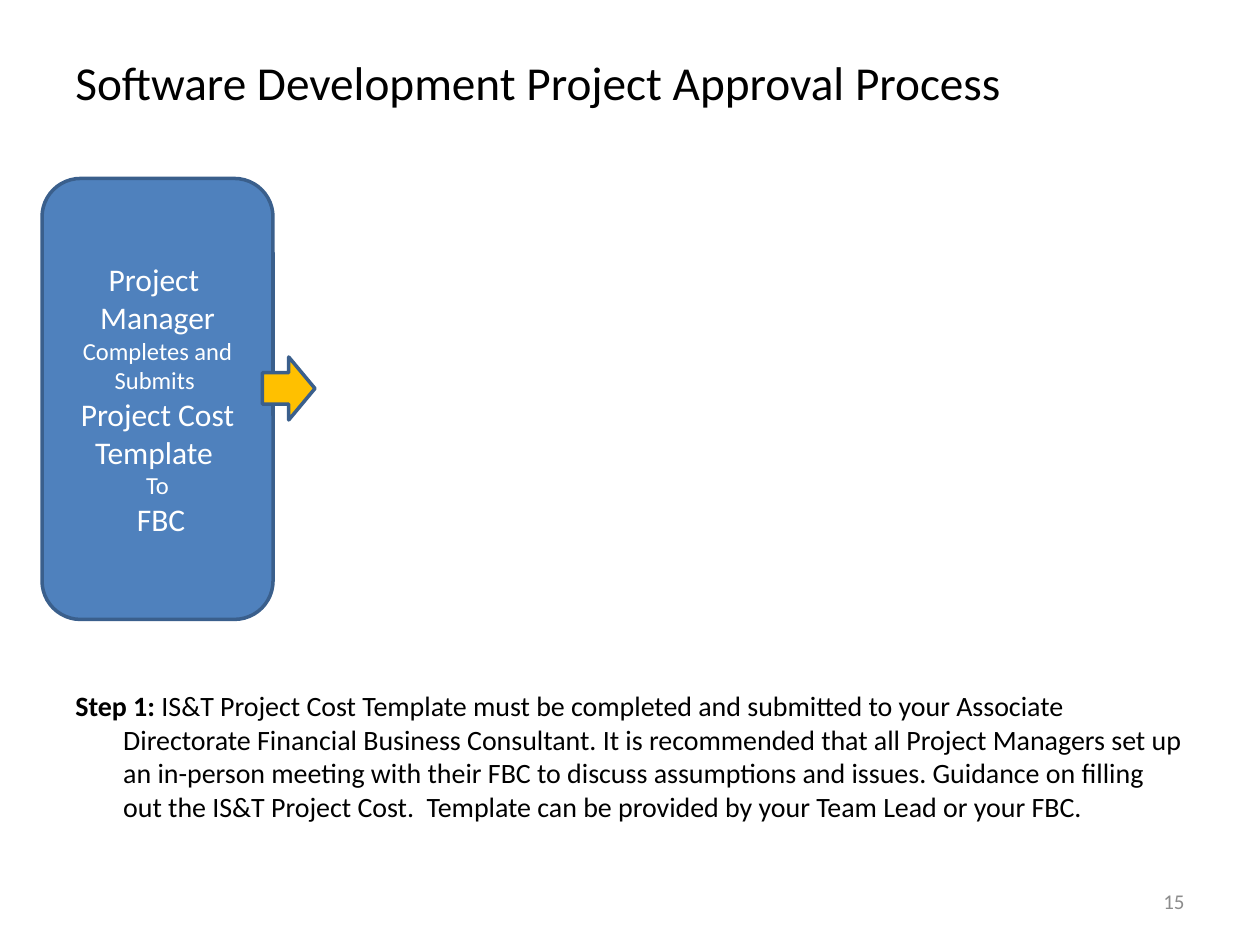
from pptx import Presentation
from pptx.dml.color import RGBColor
from pptx.enum.shapes import MSO_SHAPE
from pptx.enum.text import MSO_ANCHOR, PP_ALIGN
from pptx.util import Inches, Pt

ROUND, ARROW = MSO_SHAPE.ROUNDED_RECTANGLE, MSO_SHAPE.RIGHT_ARROW
TOP, MID = MSO_ANCHOR.TOP, MSO_ANCHOR.MIDDLE
LEFT, MIDDLE, RIGHT = PP_ALIGN.LEFT, PP_ALIGN.CENTER, PP_ALIGN.RIGHT

THEME = {
    "font": "Calibri",
    "ink": "000000", "light": "FFFFFF", "muted": "8C8C8C",
    "box": "4F81BD", "arrow": "FFC000", "edge": "3A5F8C",
    "title": 27, "lead": 18, "body": 16, "minor": 14, "note": 12,
    "line": 2,
}
COL = ROW = Inches(1) / 12  # 120 columns by 90 rows

deck = Presentation()
deck.slide_width, deck.slide_height = round(120 * COL), round(90 * ROW)
slide = deck.slides.add_slide(deck.slide_layouts[6])


def place(left, top, wide, high):
    return [round(n * unit) for n, unit in
            zip((left, top, wide, high), (COL, ROW, COL, ROW))]


def write(shape, paras, tone, align, anchor):
    """Fill a shape with paragraphs, each a list of (text, size name, bold)."""
    frame = shape.text_frame
    frame.word_wrap, frame.vertical_anchor = True, anchor
    for i, runs in enumerate(paras):
        para = frame.paragraphs[0] if i == 0 else frame.add_paragraph()
        para.alignment = align
        for text, size, bold in runs:
            run = para.add_run()
            run.text = text
            look = {"name": THEME["font"], "size": Pt(THEME[size]), "bold": bold}
            for key, value in look.items():
                setattr(run.font, key, value)
            run.font.color.rgb = RGBColor.from_string(THEME[tone])
    return frame


title = [[("Software Development Project Approval Process", "title", False)]]
step = [[
    ("Step 1: ", "body", True),
    ("IS&T Project Cost Template must be completed and submitted to your "
     "Associate Directorate Financial Business Consultant. It is recommended "
     "that all Project Managers set up an in-person meeting with\u00a0their FBC to "
     "discuss assumptions and issues. Guidance on filling out the IS&T Project "
     "Cost.  Template can be provided by your Team Lead or your FBC.",
     "body", False),
]]
task = [
    [("Project  Manager ", "lead", False),
     ("Completes and Submits ", "minor", False)],
    [("Project Cost Template ", "lead", False)],
    [("To", "minor", False)],
    [(" FBC", "lead", False)],
]
page = [[("15", "note", False)]]

# Text blocks
frames = []
for spot, paras, tone, align, anchor in (
    ((6, 3.6, 108, 8.4), title, "ink", LEFT, MID),
    ((6, 65, 108, 15.4), step, "ink", LEFT, TOP),
    ((86, 83.4, 28, 4.8), page, "muted", RIGHT, MID),
):
    box = slide.shapes.add_textbox(*place(*spot))
    frames.append(write(box, paras, tone, align, anchor))

# Hanging indent of the step note
para = frames[1].paragraphs[0]
para.space_before = Pt(0.2 * THEME["body"])
hang = Inches(0.38)
for key, value in {"marL": hang, "indent": -hang}.items():
    para._p.get_or_add_pPr().set(key, str(value))

# Process box and its arrow
for kind, spot, fill, paras in (
    (ROUND, (4, 17, 22, 42), "box", task),
    (ARROW, (25, 34, 5, 6), "arrow", []),
):
    shape = slide.shapes.add_shape(kind, *place(*spot))
    shape.shadow.inherit = False
    shape.fill.solid()
    shape.fill.fore_color.rgb = RGBColor.from_string(THEME[fill])
    shape.line.color.rgb = RGBColor.from_string(THEME["edge"])
    shape.line.width = Pt(THEME["line"])
    write(shape, paras, "light", MIDDLE, MID)

deck.save("out.pptx")
